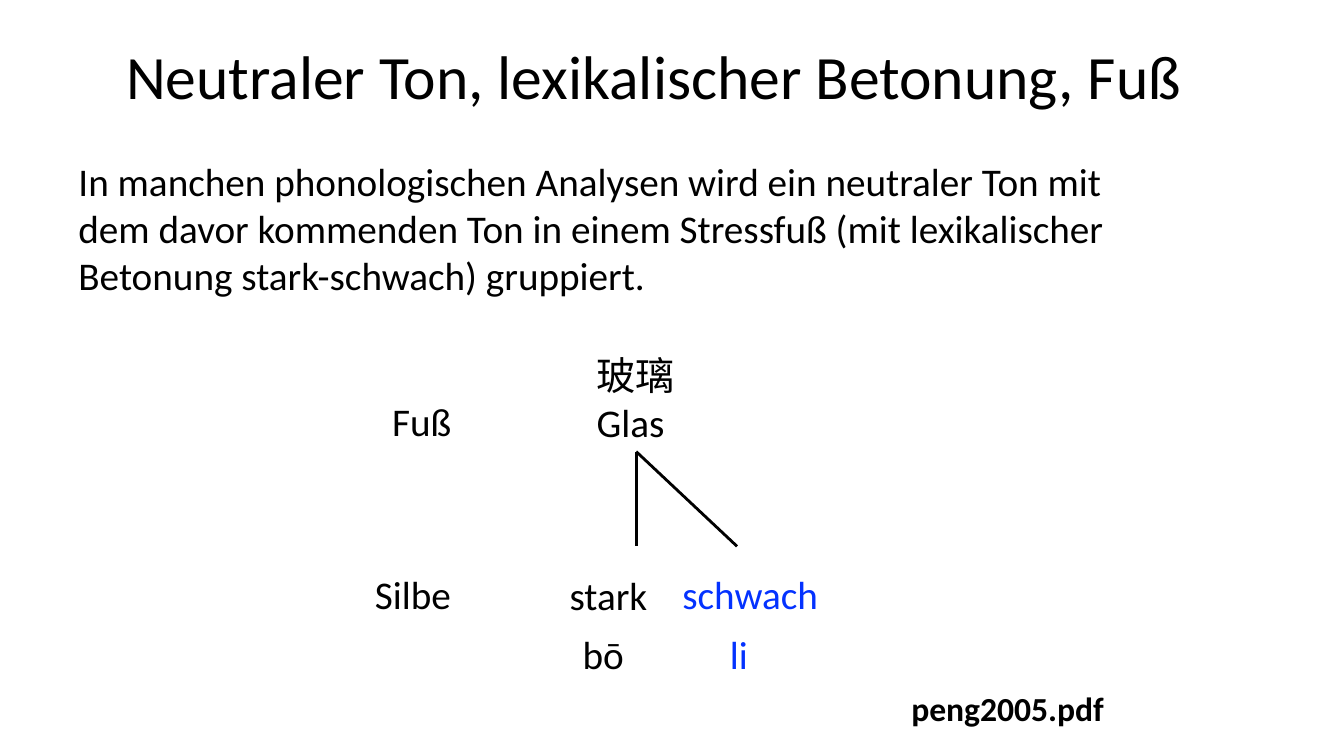
import pptx
import pptx.dml.color
import pptx.enum.shapes
import pptx.enum.text
import pptx.oxml.ns
import pptx.util
from lxml import etree
from pptx.util import Inches

COLORS = {"ink": "000000", "weak": "0432FF", "paper": "FFFFFF"}


class FootSlide:
    """Holds the text style and the slide, and adds each kind of element."""

    def __init__(self, presentation):
        self.font, self.size = "Calibri", 28
        self.slide = presentation.slides.add_slide(presentation.slide_layouts[5])
        background = self.slide.background.fill
        background.solid()
        background.fore_color.rgb = self.color("paper")

    def color(self, key):
        return pptx.dml.color.RGBColor.from_string(COLORS[key])

    def style(self, run, key="ink", size=None, bold=False):
        run.font.name = self.font
        run.font.size = pptx.util.Pt(size or self.size)
        run.font.bold = bold
        run.font.color.rgb = self.color(key)

    def title(self, words, left, top, width, height):
        heading = self.slide.shapes.title
        heading.left, heading.top = Inches(left), Inches(top)
        heading.width, heading.height = Inches(width), Inches(height)
        frame = heading.text_frame
        frame.text = words
        frame.word_wrap = True
        frame.auto_size = pptx.enum.text.MSO_AUTO_SIZE.NONE
        frame.vertical_anchor = pptx.enum.text.MSO_ANCHOR.MIDDLE
        paragraph = frame.paragraphs[0]
        paragraph.alignment = pptx.enum.text.PP_ALIGN.LEFT
        paragraph.line_spacing = 0.9
        self.style(paragraph.runs[0], size=44)

    def text(self, words, left, top, width, height, wrap=False, **look):
        box = self.slide.shapes.add_textbox(
            Inches(left), Inches(top), Inches(width), Inches(height))
        frame = box.text_frame
        frame.text = words
        frame.word_wrap = wrap
        frame.auto_size = pptx.enum.text.MSO_AUTO_SIZE.SHAPE_TO_FIT_TEXT
        for paragraph in frame.paragraphs:
            for run in paragraph.runs:
                self.style(run, **look)
        return frame

    def syllables(self, strong, weak, tab, *place):
        paragraph = self.text(strong + "\t", *place, wrap=True).paragraphs[0]
        properties = paragraph._p.get_or_add_pPr()
        stops = etree.SubElement(properties, pptx.oxml.ns.qn("a:tabLst"))
        etree.SubElement(stops, pptx.oxml.ns.qn("a:tab"),
                         pos=str(Inches(tab)), algn="l")
        run = paragraph.add_run()
        run.text = weak
        self.style(run, "weak")

    def branch(self, start, end):
        line = self.slide.shapes.add_connector(
            pptx.enum.shapes.MSO_CONNECTOR.STRAIGHT,
            *(Inches(value) for value in start + end))
        line.line.color.rgb = self.color("ink")
        line.line.width = pptx.util.Pt(2)
        etree.SubElement(line._element.spPr, pptx.oxml.ns.qn("a:effectLst"))


def main():
    presentation = pptx.Presentation()
    presentation.slide_width = Inches(13.33)
    presentation.slide_height = Inches(7.5)
    slide = FootSlide(presentation)

    slide.title("Neutraler Ton, lexikalischer Betonung, Fuß", 1.15, 0.06, 12.11, 1.45)
    slide.text("In manchen phonologischen Analysen wird ein neutraler Ton mit dem "
               "davor kommenden Ton in einem Stressfuß (mit lexikalischer Betonung "
               "stark-schwach) gruppiert.", 0.68, 1.51, 10.84, 1.51, wrap=True)

    slide.text("Fuß", 3.79, 3.89, 0.8, 0.57)
    slide.text("Silbe", 3.62, 5.61, 0.96, 0.57)
    slide.text("玻璃\nGlas", 5.82, 3.44, 1.11, 1.04, wrap=True)
    slide.text("stark", 5.55, 5.62, 0.98, 0.57)
    slide.text("schwach", 6.67, 5.61, 1.56, 0.57, key="weak")
    slide.syllables("bō", "li", 1.46, 5.68, 6.2, 2.28, 0.57)

    foot = (6.31, 4.48)
    for syllable_x in (6.31, 7.31):
        slide.branch(foot, (syllable_x, 5.42))

    slide.text("peng2005.pdf", 8.94, 6.78, 2.13, 0.5, size=24, bold=True)
    presentation.save("out.pptx")


if __name__ == "__main__":
    main()
